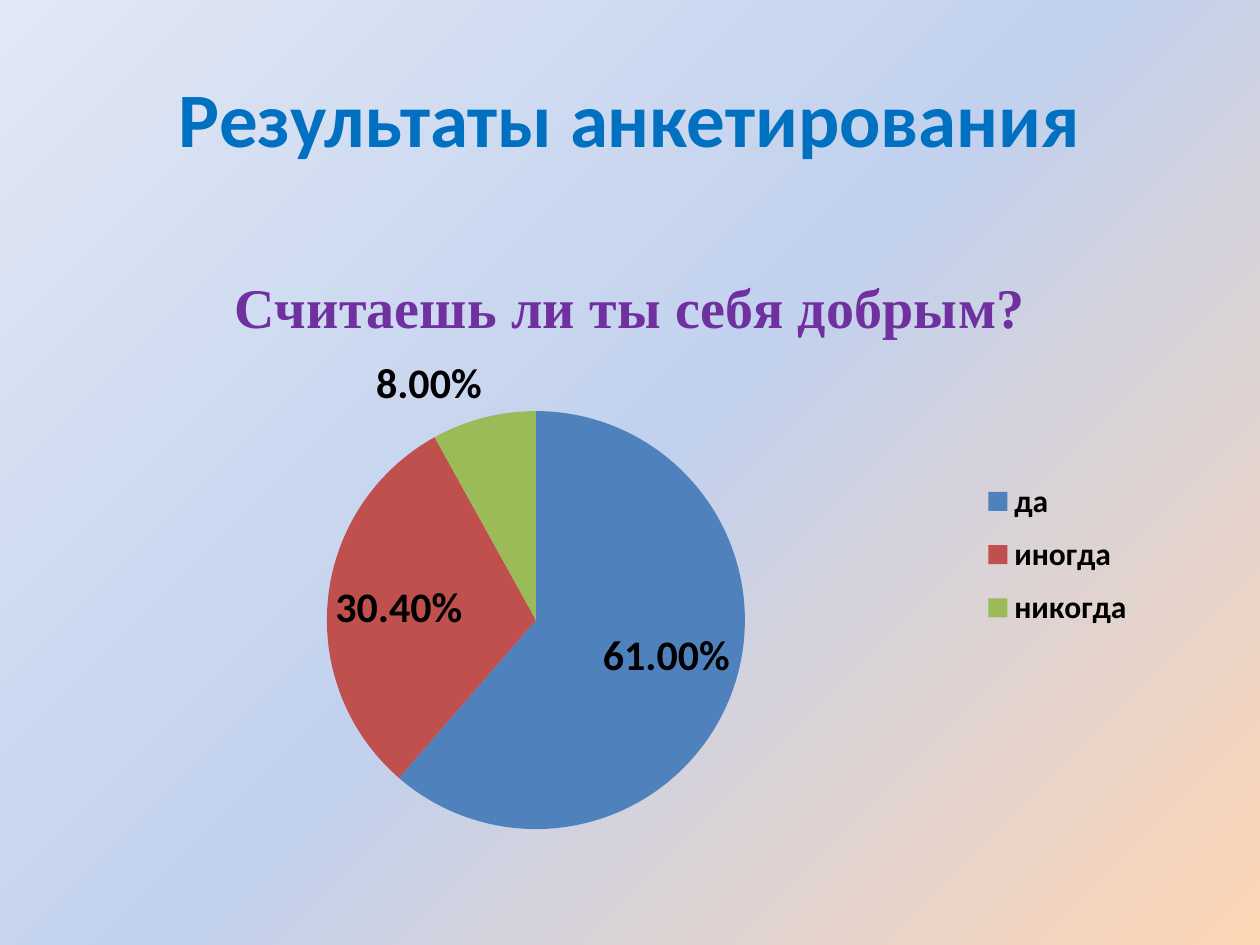
"""Builds a survey results slide with a pie chart on a gradient background."""
from copy import deepcopy

from lxml import etree
from pptx import Presentation
from pptx.chart.data import CategoryChartData
from pptx.dml.color import RGBColor
from pptx.enum.chart import XL_CHART_TYPE, XL_LABEL_POSITION, XL_LEGEND_POSITION
from pptx.enum.text import MSO_ANCHOR, PP_ALIGN
from pptx.oxml.ns import qn
from pptx.util import Pt

PIE = XL_CHART_TYPE.PIE
BEST_FIT = XL_LABEL_POSITION.BEST_FIT
RIGHT = XL_LEGEND_POSITION.RIGHT
MIDDLE = MSO_ANCHOR.MIDDLE
CENTER = PP_ALIGN.CENTER
PX = 914400 // 126
COLORS = {
    "title": "0070C0",
    "question": "7030A0",
    "text": "000000",
    "peach": "FCD5B5",
    "blue": "C2D1ED",
    "pale": "E1E8F5",
    "да": "4F81BD",
    "иногда": "C0504D",
    "никогда": "9BBB59",
}
ANSWERS = {"да": 0.61, "иногда": 0.304, "никогда": 0.08}


def style(font, size, color, name="Calibri", bold=True):
    font.size = Pt(size)
    font.bold = bold
    font.name = name
    font.color.rgb = RGBColor.from_string(COLORS[color])


def place(part, index, **values):
    for old in part.findall(qn("c:layout")):
        part.remove(old)
    layout = etree.Element(qn("c:layout"))
    manual = etree.SubElement(layout, qn("c:manualLayout"))
    for key, value in values.items():
        etree.SubElement(manual, qn("c:" + key)).set("val", str(value))
    part.insert(index, layout)


deck = Presentation()
deck.slide_width, deck.slide_height = 1260 * PX, 945 * PX
page = deck.slides.add_slide(deck.slide_layouts[5])

backdrop = page.background.fill
backdrop.gradient()
backdrop.gradient_angle = 135
stop_list = page.background._cSld.find(".//" + qn("a:gsLst"))
stop_list.insert(1, deepcopy(stop_list[0]))
for stop, color, position in zip(backdrop.gradient_stops, ("peach", "blue", "pale"), (0, 0.5, 1)):
    stop.color.rgb = RGBColor.from_string(COLORS[color])
    stop.position = position

title = page.shapes.title
title.left, title.top, title.width, title.height = [v * PX for v in (63, 38, 1134, 158)]
title.text_frame.vertical_anchor = MIDDLE
para = title.text_frame.paragraphs[0]
para.alignment = CENTER
span = para.add_run()
span.text = "Результаты анкетирования"
style(span.font, 44, "title")

data = CategoryChartData(number_format="0.00%")
data.categories = list(ANSWERS)
data.add_series("Series 1", list(ANSWERS.values()))
box = [v * PX for v in (54, 224, 1134, 624)]
chart = page.shapes.add_chart(PIE, *box, data).chart
style(chart.font, 10, "text", bold=False)

chart.has_title = True
span = chart.chart_title.text_frame.paragraphs[0].add_run()
span.text = "Считаешь ли ты себя добрым?"
style(span.font, 32, "question", "Times New Roman")

chart.has_legend = True
chart.legend.position = RIGHT
chart.legend.include_in_layout = False
style(chart.legend.font, 18, "text")

plot = chart.plots[0]
plot.vary_by_categories = True
for index, answer in enumerate(ANSWERS):
    fill = plot.series[0].points[index].format.fill
    fill.solid()
    fill.fore_color.rgb = RGBColor.from_string(COLORS[answer])

plot.has_data_labels = True
labels = plot.data_labels
labels.show_value = True
labels.show_percentage = False
labels.number_format = "0.00%"
labels.number_format_is_linked = False
labels.position = BEST_FIT
style(labels.font, 24, "text")

root = chart._chartSpace
place(root.find(".//" + qn("c:title")), 1, xMode="edge", yMode="edge", x=0.15, y=0.06)
place(root.find(".//" + qn("c:plotArea")), 0, layoutTarget="inner",
      xMode="edge", yMode="edge", x=0.24, y=0.3, w=0.37, h=0.67)
place(root.find(".//" + qn("c:legend")), 1,
      xMode="edge", yMode="edge", x=0.81, y=0.39, w=0.15, h=0.28)

deck.save("out.pptx")
